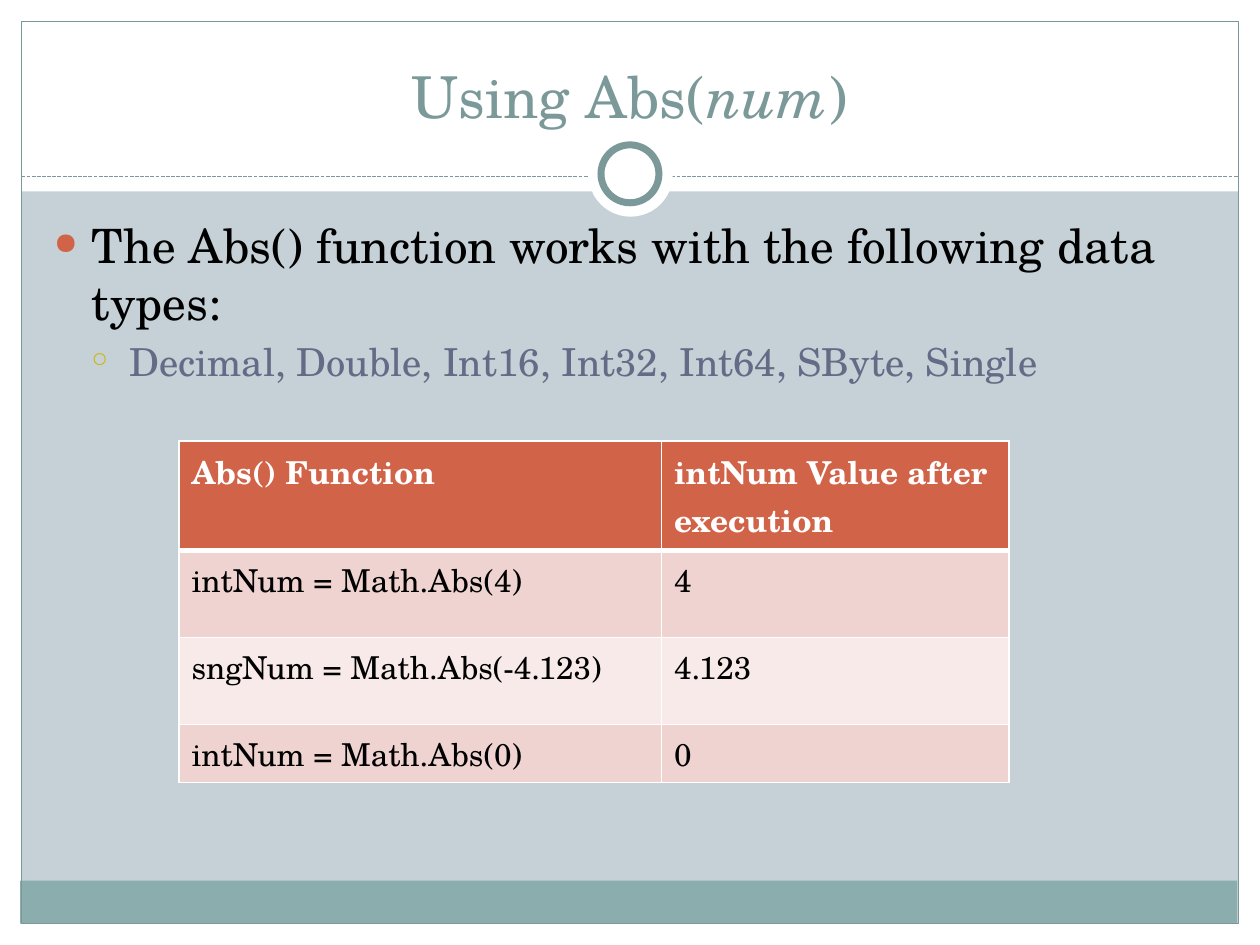
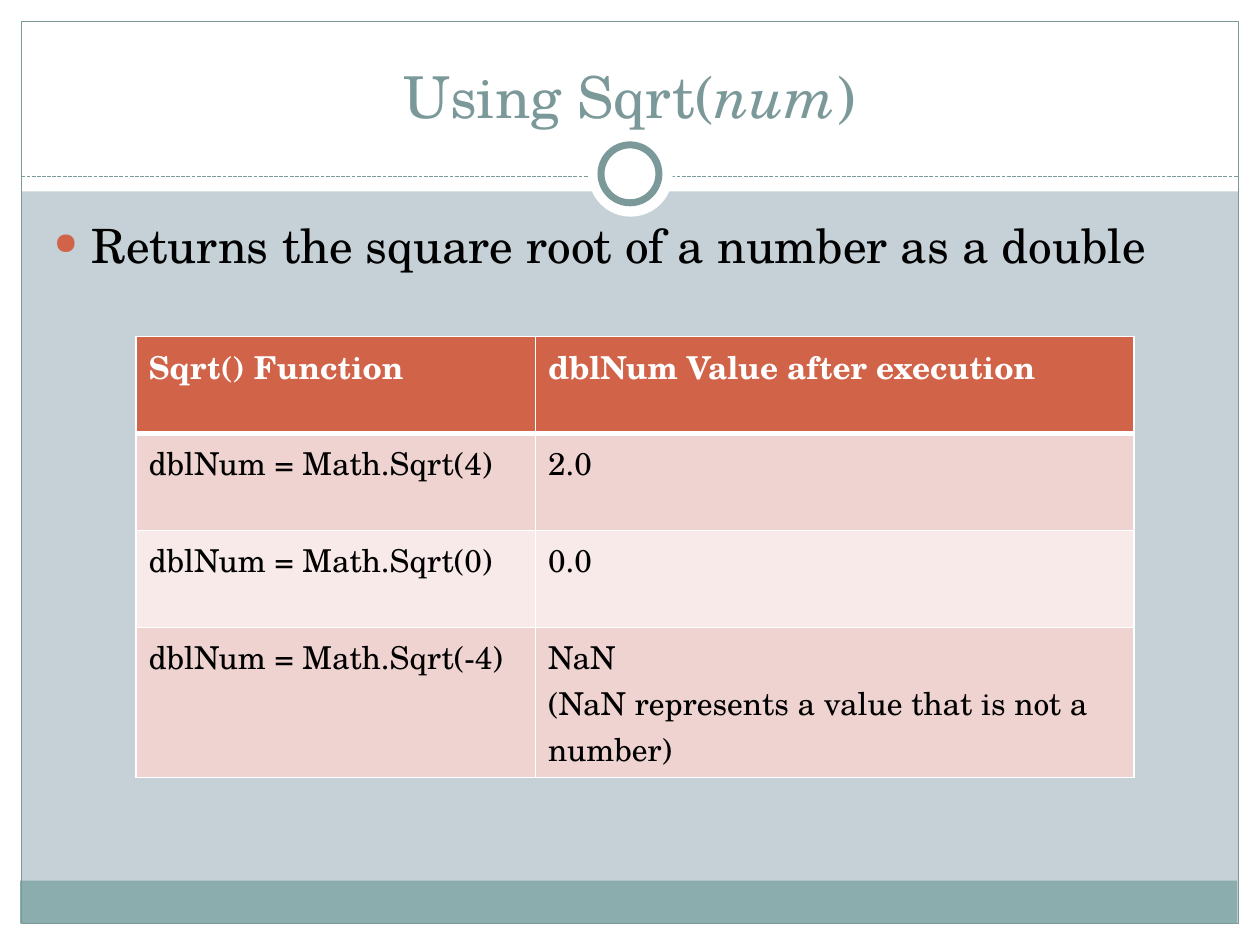
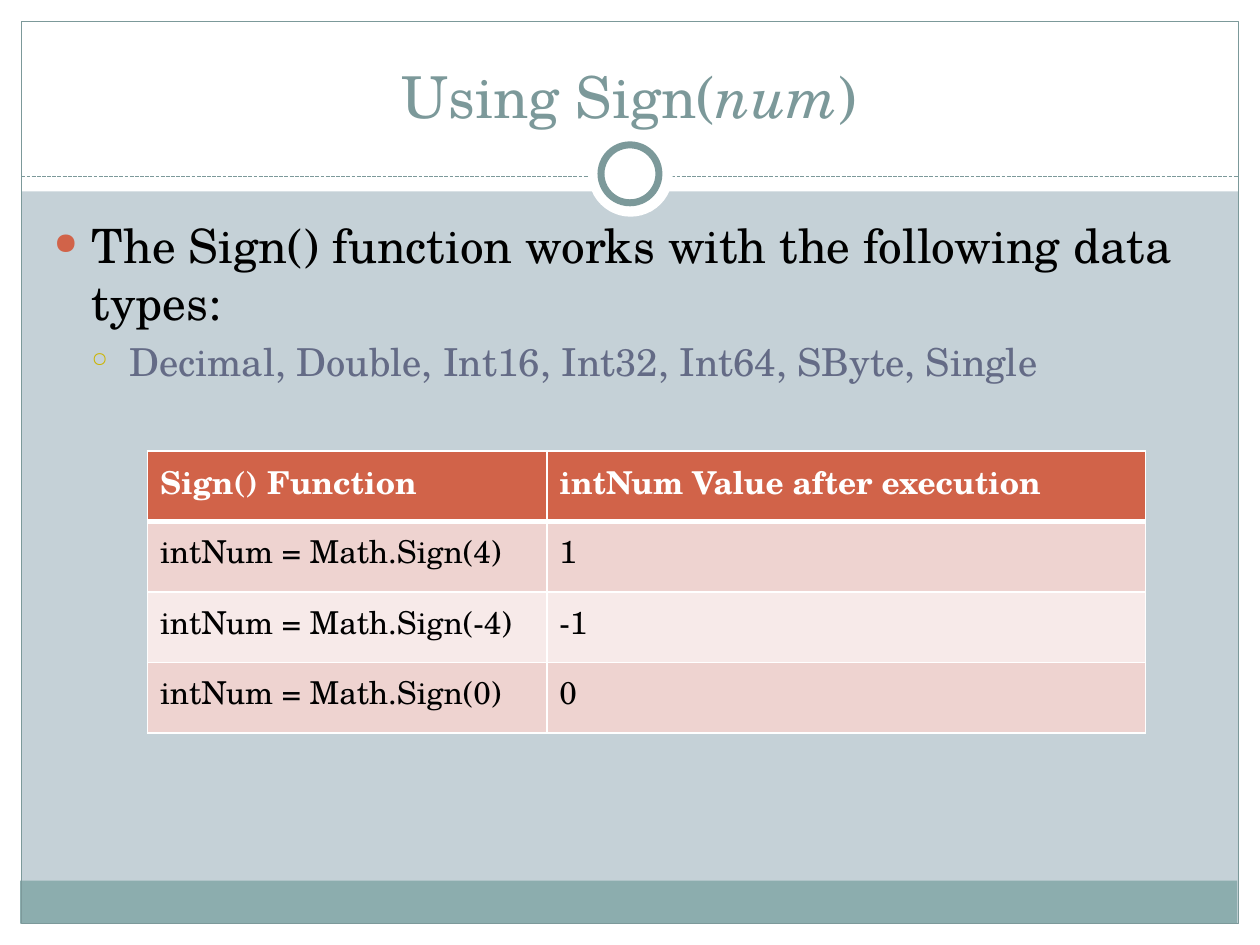
from dataclasses import dataclass

from pptx import Presentation
from pptx import util as u
from pptx.dml.color import RGBColor
from pptx.enum import dml, shapes, text
from pptx.oxml import xmlchemy as xc

PX = 9144


@dataclass(frozen=True)
class Theme:
    font: str = "TeX Gyre Schola"
    back: str = "C5D1D7"
    white: str = "FFFFFF"
    black: str = "000000"
    band: str = "8CADAE"
    teal: str = "7C999A"
    rust: str = "D16349"
    gold: str = "CCB400"
    slate: str = "646B86"
    rows: tuple = ("EED3D0", "F7EAE9")
    title: int = 33
    lead: int = 27
    sub: int = 22
    cell: int = 18


T = Theme()
TYPES = "Decimal, Double, Int16, Int32, Int64, SByte, Single"
LEVELS = (
    dict(mark="●", tint=T.rust, scale=64, size=T.lead, color=T.black),
    dict(mark="○", tint=T.gold, scale=53, size=T.sub, color=T.slate),
)


def px(n):
    return u.Emu(n * PX)


def rgb(code):
    return RGBColor.from_string(code)


def paint(item, color):
    item.fill.solid()
    item.fill.fore_color.rgb = rgb(color)


def add(node, tag, **attrs):
    child = xc.OxmlElement(tag)
    for key, value in attrs.items():
        child.set(key, str(value))
    node.append(child)
    return child


def say(para, words, size=T.cell, color=T.black, bold=False, italic=False):
    for i, line in enumerate(words.split("\n")):
        if i:
            para.add_line_break()
        run = para.add_run()
        run.text = line
        font = run.font
        font.name, font.size = T.font, u.Pt(size)
        font.bold, font.italic = bold, italic
        font.color.rgb = rgb(color)


def form(slide, kind, box, fill=None, line=None, width=0.75):
    item = slide.shapes.add_shape(kind, *map(px, box))
    item.shadow.inherit = False
    if fill:
        paint(item, fill)
    else:
        item.fill.background()
    if line:
        item.line.color.rgb = rgb(line)
        item.line.width = u.Pt(width)
    else:
        item.line.fill.background()
    return item


def rule(slide, start, end):
    item = slide.shapes.add_connector(
        shapes.MSO_CONNECTOR.STRAIGHT, *map(px, start + end))
    item.line.color.rgb = rgb(T.teal)
    item.line.width = u.Pt(0.75)
    item.line.dash_style = dml.MSO_LINE.SQUARE_DOT
    add(item.element.spPr, "a:effectLst")
    return item


def frame(slide, layout):
    rect, oval = shapes.MSO_SHAPE.RECTANGLE, shapes.MSO_SHAPE.OVAL
    edges = ((0, 733, 1000, 17), (0, 0, 1000, 152),
             (0, 0, 17, 750), (983, 0, 17, 750))
    parts = [form(slide, rect, box, T.white) for box in edges]
    parts += [
        form(slide, rect, (16, 699, 966, 34), T.band),
        form(slide, rect, (17, 17, 966, 716), line=T.teal),
        rule(slide, (17, 140), (983, 140)),
        form(slide, oval, (467, 105, 67, 67), T.white),
        form(slide, oval, (477, 115, 46, 46), T.white, T.teal, 4),
    ]
    paint(layout.background, T.back)
    for i, part in enumerate(parts):
        layout.shapes.element.insert(2 + i, part.element)


def head(slide, name):
    item = slide.shapes.title
    item.left, item.top, item.width, item.height = map(px, (33, 25, 933, 83))
    body = item.text_frame
    body.auto_size = text.MSO_AUTO_SIZE.NONE
    body.vertical_anchor = text.MSO_ANCHOR.BOTTOM
    para = body.paragraphs[0]
    para.alignment = text.PP_ALIGN.CENTER
    for words, slant in ((f"Using {name}(", False), ("num", True), (")", False)):
        say(para, words, size=T.title, color=T.teal, italic=slant)


def points(slide, lines):
    body = slide.shapes.add_textbox(*map(px, (33, 167, 930, 500))).text_frame
    body.word_wrap = True
    for i, (words, look) in enumerate(zip(lines, LEVELS)):
        para = body.add_paragraph() if i else body.paragraphs[0]
        para.level = i
        para.space_before = u.Pt(look["size"] / 5)
        props = para._p.get_or_add_pPr()
        props.set("marL", str(px(30 * (i + 1))))
        props.set("indent", str(px(-30)))
        add(add(props, "a:buClr"), "a:srgbClr", val=look["tint"])
        add(props, "a:buSzPct", val=look["scale"] * 1000)
        add(props, "a:buChar", char=look["mark"])
        say(para, words, size=look["size"], color=look["color"])


def edge(cell, side, width):
    line = add(cell._tc.get_or_add_tcPr(), f"a:ln{side}", w=u.Pt(width))
    add(add(line, "a:solidFill"), "a:srgbClr", val=T.white)


def grid(slide, spot, cols, rows, data):
    size = (sum(cols), sum(rows))
    table = slide.shapes.add_table(
        len(rows), len(cols), *map(px, spot + size)).table
    for col, wide in zip(table.columns, cols):
        col.width = px(wide)
    for row, high in zip(table.rows, rows):
        row.height = px(high)
    for r, line in enumerate(data):
        top = r == 0
        for c, words in enumerate(line):
            cell = table.cell(r, c)
            for side in "LRTB":
                thick = (r, side) in ((0, "B"), (1, "T"))
                edge(cell, side, 3 if thick else 1)
            paint(cell, T.rust if top else T.rows[(r - 1) % 2])
            say(cell.text_frame.paragraphs[0], words,
                color=T.white if top else T.black, bold=top)


def main():
    deck = Presentation()
    deck.slide_width, deck.slide_height = px(1000), px(750)
    layout = deck.slide_layouts[5]
    works = "The {}() function works with the following data types:"
    pages = (
        ("Abs", (works.format("Abs"), TYPES),
         (142, 350), (383, 276), (87, 69, 69, 46),
         (("Abs() Function", "intNum Value after execution"),
          ("intNum = Math.Abs(4)", "4"),
          ("sngNum = Math.Abs(-4.123)", "4.123"),
          ("intNum = Math.Abs(0)", "0"))),
        ("Sqrt", ("Returns the square root of a number as a double",),
         (108, 267), (317, 475), (77, 77, 77, 119),
         (("Sqrt() Function", "dblNum Value after execution"),
          ("dblNum = Math.Sqrt(4)", "2.0"),
          ("dblNum = Math.Sqrt(0)", "0.0"),
          ("dblNum = Math.Sqrt(-4)",
           "NaN\n(NaN represents a value that is not a number)"))),
        ("Sign", (works.format("Sign"), TYPES),
         (117, 358), (317, 475), (56,) * 4,
         (("Sign() Function", "intNum Value after execution"),
          ("intNum = Math.Sign(4)", "1"),
          ("intNum = Math.Sign(-4)", "-1"),
          ("intNum = Math.Sign(0)", "0"))),
    )
    for i, (name, lines, spot, cols, rows, data) in enumerate(pages):
        slide = deck.slides.add_slide(layout)
        if i == 0:
            frame(slide, layout)
        head(slide, name)
        points(slide, lines)
        grid(slide, spot, cols, rows, data)
    deck.save("out.pptx")


if __name__ == "__main__":
    main()
